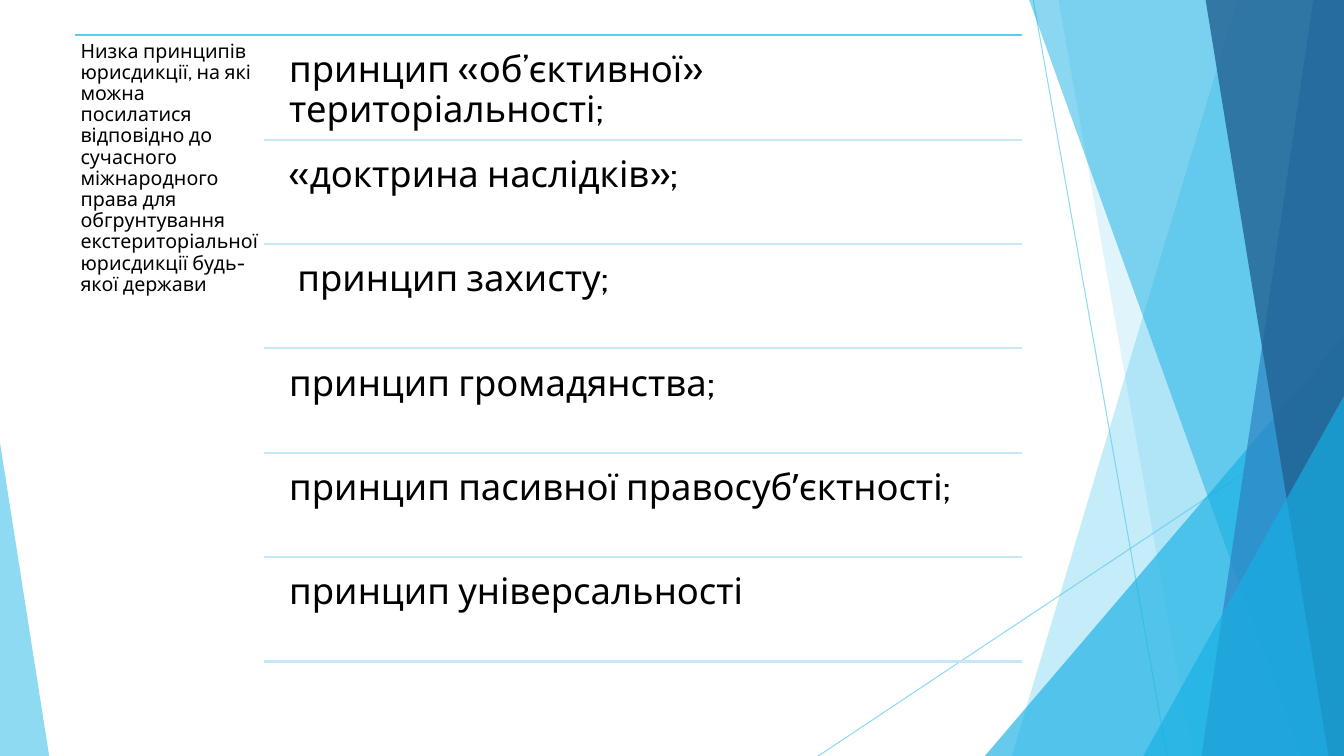
from lxml import etree
from pptx import Presentation
from pptx.dml.color import RGBColor
from pptx.enum import shapes as kinds
from pptx.oxml.ns import qn
from pptx.util import Cm, Pt

SLIDE_W, SLIDE_H = 33.87, 19.05
SKY, AZURE, BLUE, NAVY, PALE = "5FCBEF", "17B0E4", "2E83C3", "226292", "C5E7F7"
BLACK = "000000"

deck = Presentation()
deck.slide_width, deck.slide_height = Cm(SLIDE_W), Cm(SLIDE_H)
slide = deck.slides.add_slide(deck.slide_layouts[6])


def paint(color_format, color, opacity=100):
    """Set a colour given as a hex string, with opacity in percent."""
    color_format.rgb = RGBColor.from_string(color)
    if opacity < 100:
        tint = color_format._xFill.find(qn("a:srgbClr"))
        etree.SubElement(tint, qn("a:alpha"), val=str(opacity * 1000))


def add_rule(x1, y1, x2, y2, color, width, opacity=100):
    rule = slide.shapes.add_connector(
        kinds.MSO_CONNECTOR.STRAIGHT, Cm(x1), Cm(y1), Cm(x2), Cm(y2))
    rule.line.width = Pt(width)
    rule.line.fill.solid()
    paint(rule.line.fill.fore_color, color, opacity)
    etree.SubElement(rule._element.spPr, qn("a:effectLst"))


# Decorative facets along the slide edges
add_rule(26.04, 0, 29.41, SLIDE_H, SKY, 0.75, 70)
add_rule(SLIDE_W, 10.24, 20.62, SLIDE_H, SKY, 0.75, 70)

# band: x at top, x at bottom; wedge: left, top, width, tip position
facets = [
    ("band", (31.19, 25.5), SKY, 36),
    ("band", (26.67, 30.05), SKY, 20),
    ("wedge", (24.82, 8.46, 9.05, 1), AZURE, 66),
    ("band", (25.93, 32.79), AZURE, 50),
    ("band", (33.1, 30.28), BLUE, 70),
    ("band", (30.38, 33.48), NAVY, 80),
    ("wedge", (28.81, 9.98, 5.06, 1), AZURE, 66),
    ("wedge", (0, 11.15, 1.24, 0), SKY, 70),
]
for kind, geometry, color, opacity in facets:
    if kind == "band":
        top_x, bottom_x = geometry
        outline = slide.shapes.build_freeform(Cm(top_x), Cm(-0.02))
        outline.add_line_segments([
            (Cm(SLIDE_W), Cm(-0.02)), (Cm(SLIDE_W), Cm(SLIDE_H)),
            (Cm(bottom_x), Cm(SLIDE_H))], close=True)
        facet = outline.convert_to_shape()
    else:
        left, top, width, tip = geometry
        facet = slide.shapes.add_shape(
            kinds.MSO_SHAPE.ISOSCELES_TRIANGLE,
            Cm(left), Cm(top), Cm(width), Cm(SLIDE_H - top))
        facet.adjustments[0] = tip
    facet.shadow.inherit = False
    facet.line.fill.background()
    facet.fill.solid()
    paint(facet.fill.fore_color, color, opacity)

# Heading on the left, one row per principle on the right
heading = ("Низка принципів юрисдикції, на які можна посилатися відповідно до "
           "сучасного міжнародного права для обгрунтування екстериторіальної "
           "юрисдикції будь-якої держави")
principles = [
    "принцип «об’єктивної» територіальності;",
    "«доктрина наслідків»;",
    " принцип захисту;",
    "принцип громадянства;",
    "принцип пасивної правосубʼєктності;",
    "принцип універсальності",
]
LIST_LEFT, LIST_TOP, LIST_RIGHT = 1.88, 0.89, 25.76
ROW_LEFT, ROW_PITCH = 6.65, 2.63
ROW_TEXT_LEFT, ROW_TEXT_GAP = 7.01, 0.13

add_rule(LIST_LEFT, LIST_TOP, LIST_RIGHT, LIST_TOP, SKY, 1.5)
labels = [(heading, LIST_LEFT, LIST_TOP, 4.8, 15.9, 0.15, 14)]
for row, principle in enumerate(principles):
    row_top = LIST_TOP + row * ROW_PITCH
    row_bottom = row_top + ROW_PITCH
    add_rule(ROW_LEFT, row_bottom, LIST_RIGHT, row_bottom, PALE, 1.5)
    labels.append((principle, ROW_TEXT_LEFT, row_top + ROW_TEXT_GAP,
                   LIST_RIGHT - ROW_TEXT_LEFT, 2.5, 0.28, 26))

for wording, left, top, width, height, inset, size in labels:
    label = slide.shapes.add_textbox(Cm(left), Cm(top), Cm(width), Cm(height))
    frame = label.text_frame
    frame.word_wrap = True
    frame.margin_left = frame.margin_right = Cm(inset)
    frame.margin_top = frame.margin_bottom = Cm(inset)
    paragraph = frame.paragraphs[0]
    paragraph.text = wording
    paragraph.line_spacing = 0.9
    paragraph.font.name = "Cabin"
    paragraph.font.size = Pt(size)
    paint(paragraph.font.color, BLACK)

deck.save("out.pptx")
